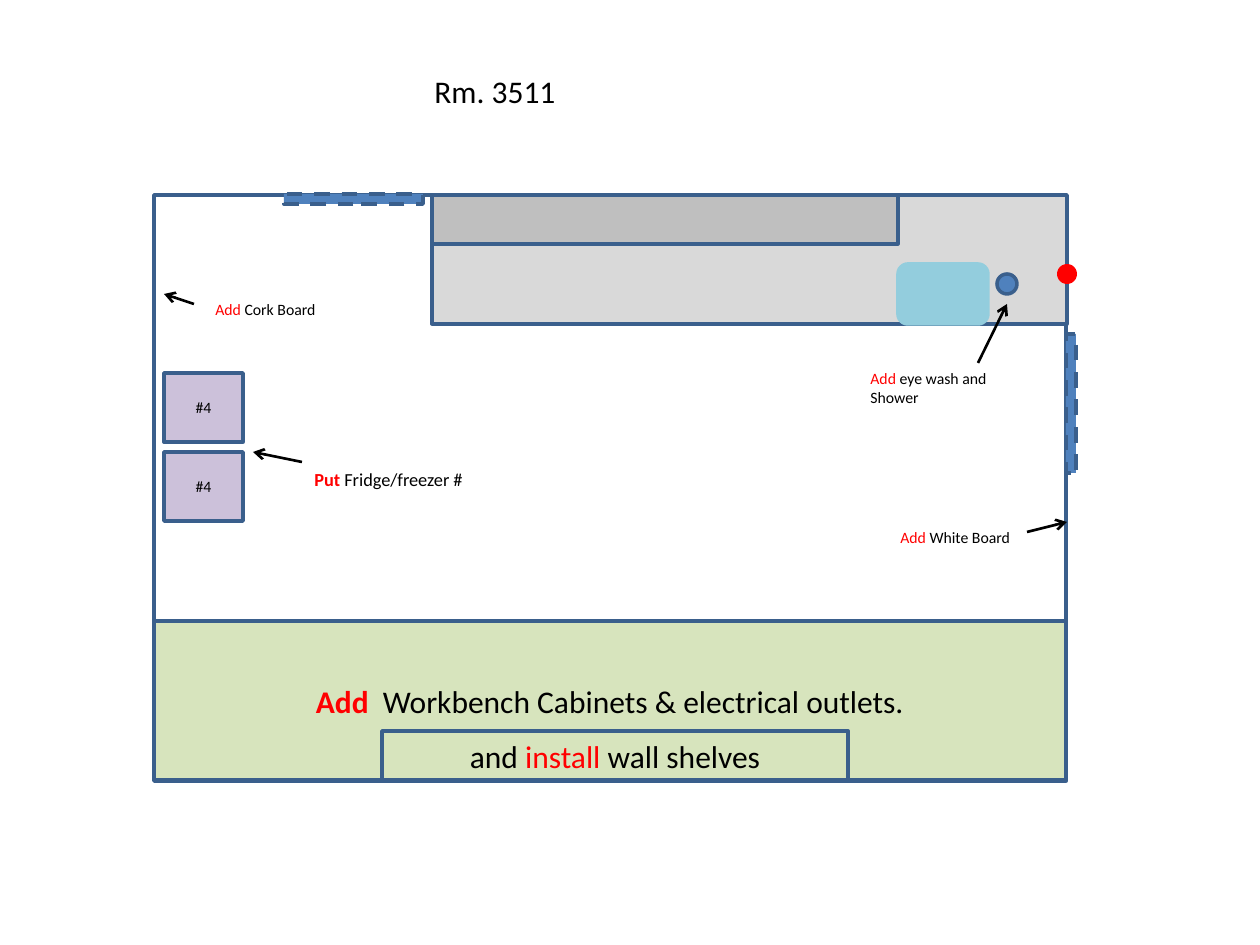
import pptx
import pptx.dml.color
import pptx.enum.dml
import pptx.enum.shapes
import pptx.enum.text
import pptx.oxml
import pptx.oxml.ns
import pptx.util

SCALE = 914400 / 126
THEME = {
    "font": "Calibri",
    "heading": 18,
    "label": 10.5,
    "note": 9,
    "ink": "000000",
    "action": "FF0000",
    "outline": "3A5F8C",
    "fixture": "4F81BD",
    "counter": "D9D9D9",
    "cabinet": "BFBFBF",
    "workbench": "D7E4BD",
    "sink": "93CDDD",
    "fridge": "CCC1DA",
}
RECTANGLE = pptx.enum.shapes.MSO_SHAPE.RECTANGLE
ROUNDED = pptx.enum.shapes.MSO_SHAPE.ROUNDED_RECTANGLE
OVAL = pptx.enum.shapes.MSO_SHAPE.OVAL


def emu(*lengths):
    return [pptx.util.Emu(round(length * SCALE)) for length in lengths]


def write(frame, paragraphs, size, alignment):
    for index, runs in enumerate(paragraphs):
        para = frame.add_paragraph() if index else frame.paragraphs[0]
        para.alignment = alignment
        for text, color, bold in runs:
            span = para.add_run()
            span.text = text
            span.font.name = THEME["font"]
            span.font.size = pptx.util.Pt(THEME[size])
            span.font.bold = bold
            span.font.color.rgb = pptx.dml.color.RGBColor.from_string(THEME[color])


deck = pptx.Presentation()
deck.slide_width, deck.slide_height = emu(1260, 945)
page = deck.slides.add_slide(deck.slide_layouts[6])

bench_text = [("Add", "action", True), ("  Workbench Cabinets & electrical outlets.", "ink", False)]
shelf_text = [("and ", "ink", False), ("install", "action", False), (" wall shelves", "ink", False)]
fridge_text = [("#4", "ink", False)]

plan = [
    (RECTANGLE, (154, 195, 912, 586), None, "outline", None, None),
    (RECTANGLE, (432, 195, 635, 129), "counter", "outline", None, None),
    (RECTANGLE, (154, 621, 912, 159), "workbench", "outline", bench_text, "heading"),
    (RECTANGLE, (432, 195, 466, 49), "cabinet", "outline", None, None),
    (OVAL, (1057, 264, 20, 20), "action", None, None, None),
    (ROUNDED, (898, 264, 90, 60), "sink", "sink", None, None),
    (RECTANGLE, (164, 373, 79, 69), "fridge", "outline", fridge_text, "note"),
    (RECTANGLE, (164, 452, 79, 69), "fridge", "outline", fridge_text, "note"),
    (RECTANGLE, (382, 731, 466, 49), "workbench", "outline", shelf_text, "heading"),
    (OVAL, (997, 274, 20, 20), "fixture", "outline", None, None),
]
for kind, place, fill, line, runs, size in plan:
    shape = page.shapes.add_shape(kind, *emu(*place))
    shape.shadow.inherit = False
    if fill:
        shape.fill.solid()
        shape.fill.fore_color.rgb = pptx.dml.color.RGBColor.from_string(THEME[fill])
    else:
        shape.fill.background()
    if line:
        shape.line.color.rgb = pptx.dml.color.RGBColor.from_string(THEME[line])
        shape.line.width = pptx.util.Pt(2)
    else:
        shape.line.fill.background()
    if runs:
        shape.text_frame.vertical_anchor = pptx.enum.text.MSO_ANCHOR.MIDDLE
        write(shape.text_frame, [runs], size, pptx.enum.text.PP_ALIGN.CENTER)

for place in [(284, 194, 139, 10), (1066, 334, 10, 139)]:
    board = page.shapes.add_shape(RECTANGLE, *emu(*place))
    board.shadow.inherit = False
    board.fill.solid()
    board.fill.fore_color.rgb = pptx.dml.color.RGBColor.from_string(THEME["fixture"])
    board.line.color.rgb = pptx.dml.color.RGBColor.from_string(THEME["outline"])
    board.line.width = pptx.util.Pt(2.25)
    board.line.dash_style = pptx.enum.dml.MSO_LINE.DASH

add = ("Add", "action", False)
labels = [
    ((422, 66, 147, 50), "heading", [[("Rm. 3511", "ink", False)]]),
    ((302, 462, 181, 35), "label", [[("Put", "action", True), (" Fridge/freezer #", "ink", False)]]),
    ((888, 522, 136, 32), "note", [[add, (" White Board", "ink", False)]]),
    ((203, 294, 126, 32), "note", [[add, (" Cork Board", "ink", False)]]),
    ((858, 363, 146, 50), "note", [[add, (" eye wash and", "ink", False)], [("Shower", "ink", False)]]),
]
for place, size, paragraphs in labels:
    box = page.shapes.add_textbox(*emu(*place))
    box.text_frame.word_wrap = False
    box.text_frame.auto_size = pptx.enum.text.MSO_AUTO_SIZE.SHAPE_TO_FIT_TEXT
    write(box.text_frame, paragraphs, size, pptx.enum.text.PP_ALIGN.LEFT)

arrows = [(302, 462, 253, 452), (1027, 532, 1067, 522), (194, 304, 164, 294), (978, 363, 1007, 304)]
for ends in arrows:
    arrow = page.shapes.add_connector(pptx.enum.shapes.MSO_CONNECTOR.STRAIGHT, *emu(*ends))
    arrow.line.color.rgb = pptx.dml.color.RGBColor.from_string(THEME["ink"])
    arrow.line.width = pptx.util.Pt(1.5)
    properties = arrow.element.spPr
    head = pptx.oxml.parse_xml(f'<a:tailEnd {pptx.oxml.ns.nsdecls("a")} type="arrow"/>')
    properties.find(pptx.oxml.ns.qn("a:ln")).append(head)
    properties.append(pptx.oxml.parse_xml(f'<a:effectLst {pptx.oxml.ns.nsdecls("a")}/>'))

deck.save("out.pptx")
